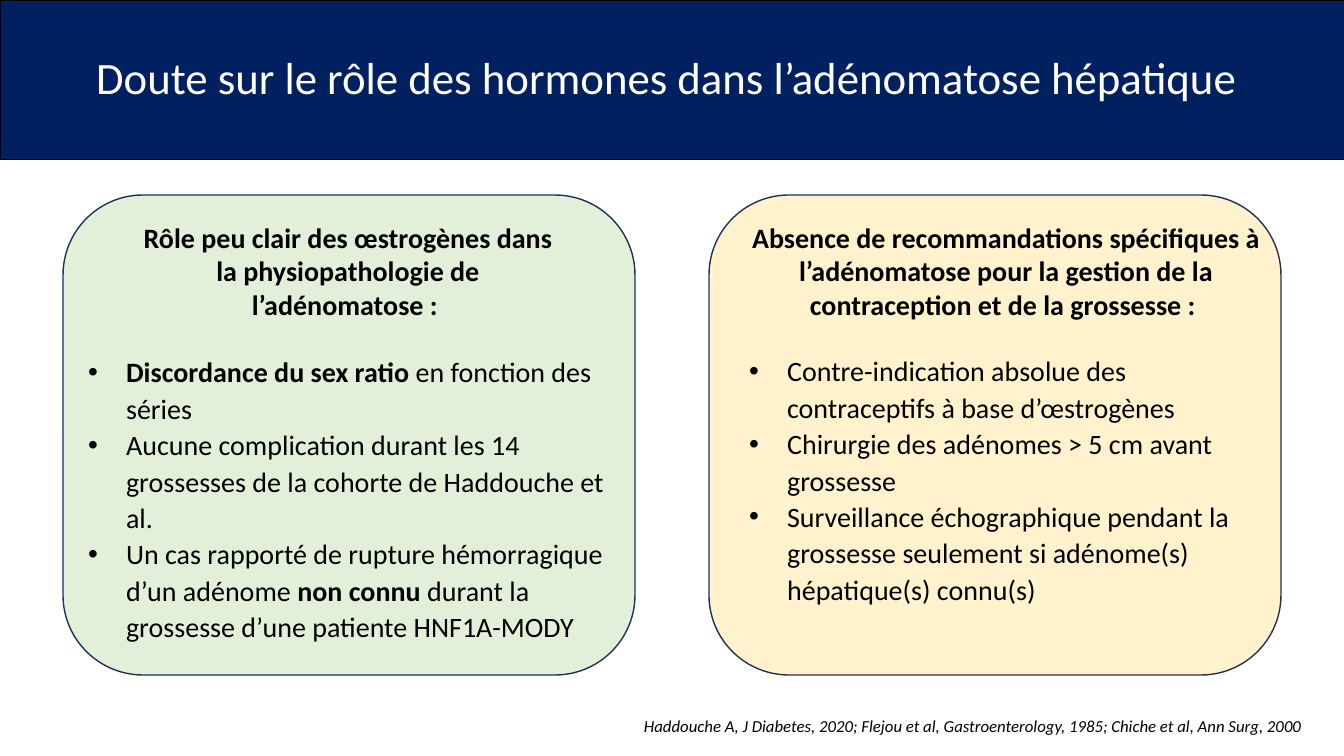
"""Build the slide on hormones in hepatic adenomatosis."""
from pptx import Presentation
from pptx.dml.color import RGBColor
from pptx.enum.shapes import MSO_SHAPE
from pptx.enum.text import MSO_ANCHOR, MSO_AUTO_SIZE, PP_ALIGN
from pptx.util import Emu, Pt

ROUNDED = MSO_SHAPE.ROUNDED_RECTANGLE
TOP, MIDDLE = MSO_ANCHOR.TOP, MSO_ANCHOR.MIDDLE
LEFT, CENTER = PP_ALIGN.LEFT, PP_ALIGN.CENTER
FIXED = MSO_AUTO_SIZE.NONE
EMU_PER_PX = 914400 / 100.8
COMPARISON_LAYOUT = 4
BULLET_INDENT = 38

THEME = {
    "font": "Calibri",
    "navy": RGBColor.from_string("002060"),
    "outline": RGBColor.from_string("1E3256"),
    "green": RGBColor.from_string("E2F0D9"),
    "cream": RGBColor.from_string("FFF2CC"),
    "white": RGBColor.from_string("FFFFFF"),
    "black": RGBColor.from_string("000000"),
    "title": Pt(32),
    "text": Pt(20),
    "source": Pt(12),
    "bullet_line": Pt(26),
}


def px(length):
    return Emu(round(length * EMU_PER_PX))


def set_text(box, place, paragraphs, size, color, align=LEFT, anchor=TOP, spacing=1.0):
    """Place a box and fill it with paragraphs of (text, bold) spans."""
    box.left, box.top, box.width, box.height = map(px, place)
    frame = box.text_frame
    frame.word_wrap = True
    frame.auto_size = FIXED
    frame.vertical_anchor = anchor
    for number, spans in enumerate(paragraphs):
        para = frame.add_paragraph() if number else frame.paragraphs[0]
        para.alignment = align
        para.line_spacing = spacing
        para.space_before = para.space_after = Pt(0)
        for text, bold in spans:
            span = para.add_run()
            span.text = text
            span.font.name = THEME["font"]
            span.font.size = size
            span.font.bold = bold
            span.font.color.rgb = color


COLUMNS = [
    {
        "fill": THEME["green"],
        "card_left": 63,
        "heading_place": (133, 215, 430, 112),
        "heading": "Rôle peu clair des œstrogènes dans la physiopathologie de l’adénomatose : ",
        "list_place": (78, 347, 560, 304),
        "bullets": [
            [("Discordance du sex ratio ", True), ("en fonction des séries", False)],
            [("Aucune complication durant les 14 grossesses de la cohorte de Haddouche et al.", False)],
            [
                ("Un cas rapporté de rupture hémorragique d’un adénome ", False),
                ("non connu ", True),
                ("durant la grossesse d’une patiente HNF1A-MODY", False),
            ],
        ],
    },
    {
        "fill": THEME["cream"],
        "card_left": 709,
        "heading_place": (739, 215, 534, 112),
        "heading": "Absence de recommandations spécifiques à l’adénomatose pour la gestion "
                   "de la contraception et de la grossesse : ",
        "list_place": (739, 346, 534, 266),
        "bullets": [
            [("Contre-indication absolue des contraceptifs à base d’œstrogènes", False)],
            [("Chirurgie des adénomes > 5 cm avant grossesse", False)],
            [("Surveillance échographique pendant la grossesse seulement si adénome(s) "
              "hépatique(s) connu(s)", False)],
        ],
    },
]

deck = Presentation()
deck.slide_width, deck.slide_height = px(1344), px(756)
page = deck.slides.add_slide(deck.slide_layouts[COMPARISON_LAYOUT])
title, *column_boxes = page.placeholders

title.fill.solid()
title.fill.fore_color.rgb = THEME["navy"]
title.line.color.rgb = THEME["black"]
title.line.width = Pt(0.5)
set_text(title, (0, 0, 1344, 159),
         [[("Doute sur le rôle des hormones dans l’adénomatose hépatique ", False)]],
         THEME["title"], THEME["white"], CENTER, MIDDLE, 0.9)

for number, column in enumerate(COLUMNS):
    heading_box, list_box = column_boxes[2 * number:2 * number + 2]

    card = page.shapes.add_shape(ROUNDED, px(column["card_left"]), px(195), px(572), px(480))
    card.shadow.inherit = False
    card.fill.solid()
    card.fill.fore_color.rgb = column["fill"]
    card.line.color.rgb = THEME["outline"]
    card.line.width = Pt(1)
    heading_box.element.addprevious(card.element)

    set_text(heading_box, column["heading_place"], [[(column["heading"], True)]],
             THEME["text"], THEME["black"], CENTER)
    set_text(list_box, column["list_place"], column["bullets"],
             THEME["text"], THEME["black"], spacing=THEME["bullet_line"])
    for para in list_box.text_frame.paragraphs:
        properties = para.runs[0].font and para._p.get_or_add_pPr()
        properties.set("marL", str(px(BULLET_INDENT)))
        properties.set("indent", str(-px(BULLET_INDENT)))

source = page.shapes.add_textbox(px(634), px(711), px(700), px(30))
set_text(source, (634, 711, 700, 30),
         [[("Haddouche A, J Diabetes, 2020; Flejou et al, Gastroenterology, 1985; "
            "Chiche et al, Ann Surg, 2000", False)]],
         THEME["source"], THEME["black"])
source.text_frame.paragraphs[0].runs[0].font.italic = True

deck.save("out.pptx")
